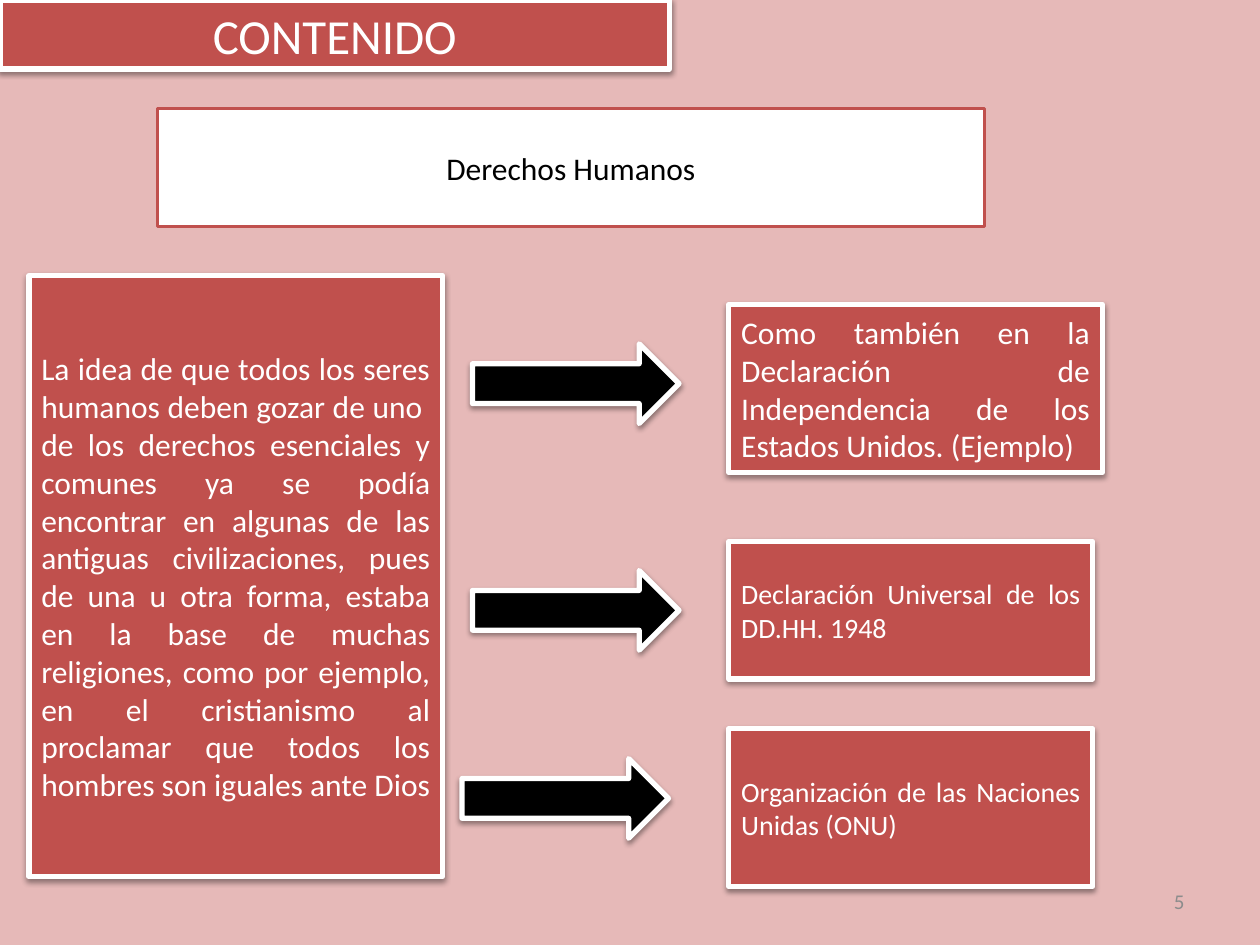
"""Build the slide on human rights with its boxes and arrows."""
import pptx
import pptx.dml.color
import pptx.enum.shapes
import pptx.enum.text
import pptx.oxml
import pptx.oxml.ns
import pptx.util

Pt = pptx.util.Pt
Kind = pptx.enum.shapes.MSO_SHAPE
Align = pptx.enum.text.PP_ALIGN

HUES = {
    "back": "E6B9B8",
    "red": "C0504D",
    "white": "FFFFFF",
    "black": "000000",
    "gray": "8C8C8C",
}

IDEA = (
    "La idea de que todos los seres humanos deben gozar de uno  de los "
    "derechos esenciales y comunes ya se podía encontrar en algunas de las "
    "antiguas civilizaciones, pues de una u otra forma, estaba en la base de "
    "muchas religiones, como por ejemplo, en el cristianismo al proclamar que "
    "todos los hombres son iguales ante Dios"
)
STATES = (
    "Como también en la Declaración de Independencia de los Estados Unidos. "
    "(Ejemplo)"
)
NOTES = [
    (IDEA, (16.5, 157.5, 236.5, 343.5), 18, 0),
    (STATES, (416.5, 174, 213.5, 96), 18, 0),
    ("Declaración Universal de los DD.HH. 1948", (416.5, 309.5, 208, 78.5), 16, 10),
    ("Organización de las Naciones Unidas (ONU)", (416.5, 416.5, 208, 90), 16, 10),
]
ARROWS = [(270, 196.5), (270, 326), (264, 433.5)]


def hue(name):
    """Return the named colour."""
    return pptx.dml.color.RGBColor.from_string(HUES[name])


def place(shape, box):
    """Move and size a shape in points."""
    shape.left, shape.top, shape.width, shape.height = map(Pt, box)


def shade(shape):
    """Give a shape a soft shadow below it."""
    shape.shadow.inherit = False
    effect = shape._element.spPr.find(pptx.oxml.ns.qn("a:effectLst"))
    effect.append(pptx.oxml.parse_xml(
        f'<a:outerShdw {pptx.oxml.ns.nsdecls("a")} blurRad="{Pt(3.1)}" '
        f'dist="{Pt(1.6)}" dir="5400000" rotWithShape="0">'
        f'<a:srgbClr val="{HUES["black"]}"><a:alpha val="38000"/></a:srgbClr>'
        '</a:outerShdw>'))


def paint(shape, fill, edge="white", width=3):
    """Set the fill and outline of a shape."""
    shape.fill.solid()
    shape.fill.fore_color.rgb = hue(fill)
    shape.line.color.rgb = hue(edge)
    shape.line.width = Pt(width)


def write(shape, text, size, color="white", align=Align.JUSTIFY, after=0):
    """Put one formatted paragraph in a shape."""
    frame = shape.text_frame
    frame.text = text
    frame.word_wrap = True
    frame.auto_size = pptx.enum.text.MSO_AUTO_SIZE.NONE
    frame.vertical_anchor = pptx.enum.text.MSO_ANCHOR.MIDDLE
    para = frame.paragraphs[0]
    para.alignment = align
    para.space_after = Pt(after)
    for run in para.runs:
        run.font.name = "Calibri"
        run.font.size = Pt(size)
        run.font.color.rgb = hue(color)


def add_title(slide, text):
    """Turn the title placeholder into the top banner."""
    title = slide.shapes.title
    place(title, (0, 0, 382.5, 39.5))
    paint(title, "red")
    shade(title)
    write(title, text, 28, align=Align.CENTER)


def add_topic(slide, text):
    """Add the white topic box."""
    topic = slide.shapes.add_shape(Kind.RECTANGLE, 0, 0, 0, 0)
    place(topic, (90, 62, 472.5, 67.5))
    paint(topic, "white", "red", 2)
    topic.shadow.inherit = False
    write(topic, text, 18, "black", Align.CENTER)


def add_note(slide, text, box, size, after):
    """Add a red box with justified text."""
    note = slide.shapes.add_shape(Kind.RECTANGLE, 0, 0, 0, 0)
    place(note, box)
    paint(note, "red")
    shade(note)
    write(note, text, size, after=after)


def add_arrow(slide, left, top):
    """Add a black block arrow."""
    arrow = slide.shapes.add_shape(Kind.RIGHT_ARROW, 0, 0, 0, 0)
    place(arrow, (left, top, 118, 45.5))
    paint(arrow, "black")
    shade(arrow)


def add_page(slide, text):
    """Add the page number."""
    page = slide.shapes.add_textbox(0, 0, 0, 0)
    place(page, (516, 500.5, 168, 29))
    write(page, text, 12, "gray", Align.RIGHT)


def main():
    """Build and save the deck."""
    deck = pptx.Presentation()
    deck.slide_width, deck.slide_height = Pt(720), Pt(540)
    slide = deck.slides.add_slide(deck.slide_layouts.get_by_name("Title Only"))
    slide.background.fill.solid()
    slide.background.fill.fore_color.rgb = hue("back")
    add_title(slide, "CONTENIDO")
    add_topic(slide, "Derechos Humanos")
    for note in NOTES:
        add_note(slide, *note)
    for spot in ARROWS:
        add_arrow(slide, *spot)
    add_page(slide, "5")
    deck.save("out.pptx")


if __name__ == "__main__":
    main()
